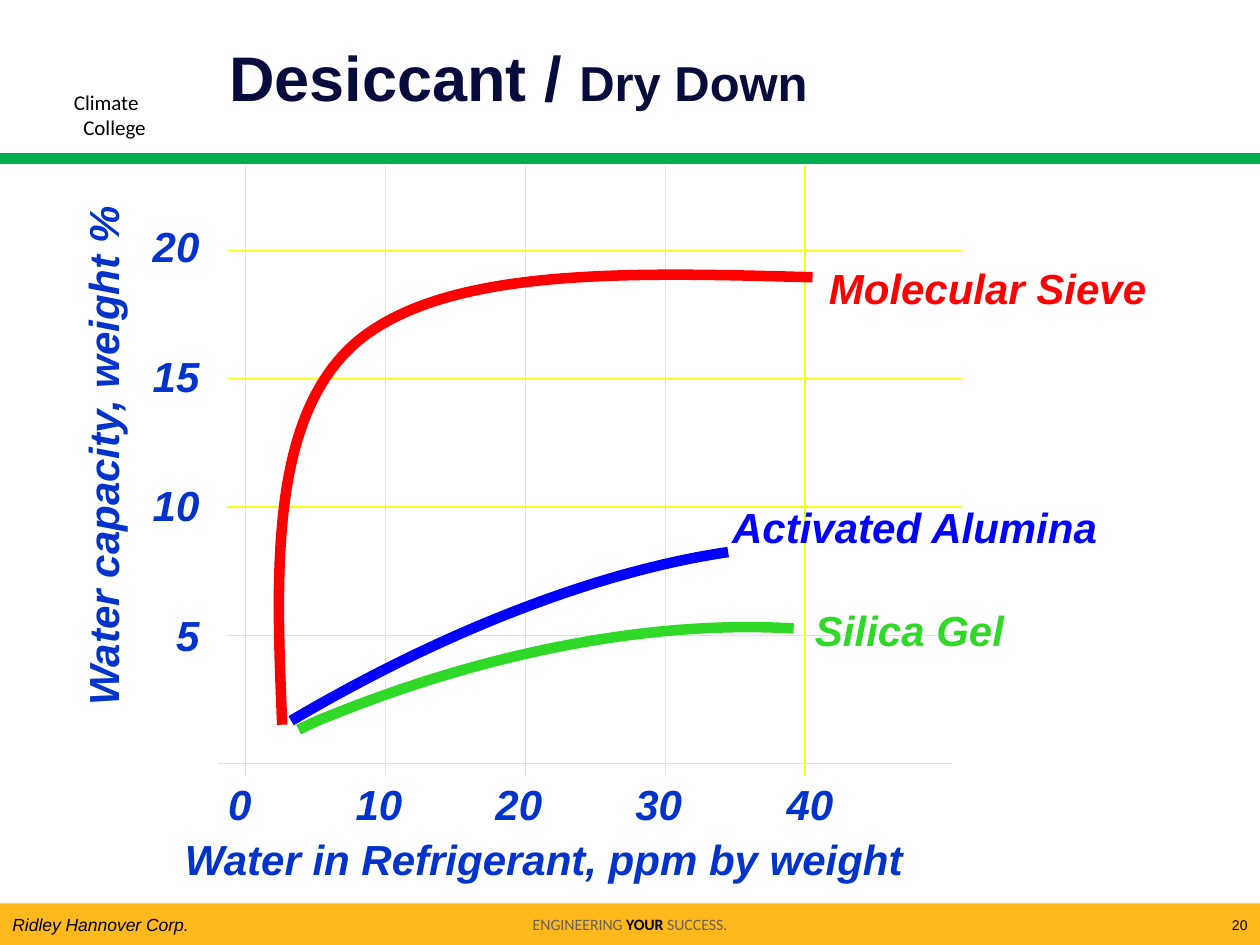
from dataclasses import dataclass

from lxml import etree
from pptx import Presentation
from pptx.dml.color import RGBColor
from pptx.enum.shapes import MSO_CONNECTOR, MSO_SHAPE
from pptx.enum.text import MSO_ANCHOR, PP_ALIGN
from pptx.oxml.ns import qn
from pptx.util import Cm, Pt

STRAIGHT = MSO_CONNECTOR.STRAIGHT
RECTANGLE = MSO_SHAPE.RECTANGLE
TOP, MIDDLE = MSO_ANCHOR.TOP, MSO_ANCHOR.MIDDLE
LEFT, CENTER, RIGHT = PP_ALIGN.LEFT, PP_ALIGN.CENTER, PP_ALIGN.RIGHT


@dataclass(frozen=True)
class Theme:
    heading_font: str = "Arial"
    brand_font: str = "Calibri"
    black: str = "000000"
    navy: str = "070C3C"
    axis: str = "0033CC"
    grid: str = "F2FD1D"
    rule: str = "00B050"
    footer: str = "FFB91D"
    motto: str = "6A6055"
    sieve: str = "FF0000"
    alumina: str = "0000FF"
    silica: str = "30D828"
    title_size: int = 36
    subtitle_size: int = 28
    label_size: int = 24
    college_size: int = 12
    company_size: int = 10
    motto_size: int = 9
    number_size: int = 8
    thick: float = 6
    thin: float = 0.75


class SlideBuilder:
    def __init__(self, slide, theme):
        self.shapes = slide.shapes
        self.theme = theme

    def style(self, run, size, color, font=None, bold=False, italic=False):
        run.font.name = font or self.theme.heading_font
        run.font.size = Pt(size)
        run.font.bold = bold
        run.font.italic = italic
        run.font.color.rgb = RGBColor.from_string(color)

    def frame(self, box, anchor=TOP, insets=(0.25, 0.13, 0.25, 0.13), rotation=0):
        holder = self.shapes.add_textbox(*map(Cm, box))
        holder.rotation = rotation
        frame = holder.text_frame
        frame.word_wrap = True
        frame.vertical_anchor = anchor
        (frame.margin_left, frame.margin_top,
         frame.margin_right, frame.margin_bottom) = map(Cm, insets)
        return frame

    def text(self, words, box, size, color, align=LEFT, anchor=MIDDLE, italic=False):
        paragraph = self.frame(box, anchor).paragraphs[0]
        paragraph.text = words
        paragraph.alignment = align
        self.style(paragraph.runs[0], size, color, italic=italic)

    def label(self, words, left, top, width, color, align=LEFT, rotation=0, tabs=()):
        frame = self.frame((left, top, width, 1.3), insets=(0.76, 0.38, 0.25, 0.13),
                           rotation=rotation)
        paragraph = frame.paragraphs[0]
        paragraph.text = words
        if tabs:
            stops = etree.SubElement(paragraph._p.get_or_add_pPr(), qn("a:tabLst"))
            for position in tabs:
                etree.SubElement(stops, qn("a:tab"), pos=str(Cm(position)), algn="ctr")
        paragraph.alignment = align
        paragraph.line_spacing = 0.8
        self.style(paragraph.runs[0], self.theme.label_size, color, bold=True, italic=True)

    def title(self, heading, topic):
        paragraph = self.frame((4.37, 0.2, 19.53, 2.69), MIDDLE).paragraphs[0]
        sizes = self.theme.title_size, self.theme.subtitle_size
        for words, size in zip((heading, topic), sizes):
            run = paragraph.add_run()
            run.text = words
            self.style(run, size, self.theme.navy, bold=True)

    def college(self, first, second):
        frame = self.frame((1.24, 1.68, 2.29, 1.27))
        frame.text = f"{first}\n{second}"
        frame.paragraphs[1]._p.get_or_add_pPr().set("marL", str(Cm(0.19)))
        for paragraph in frame.paragraphs:
            self.style(paragraph.runs[0], self.theme.college_size, self.theme.black,
                       self.theme.brand_font)

    def footer(self, parts):
        band = self.shapes.add_shape(RECTANGLE, Cm(0), Cm(18.21), Cm(25.4), Cm(0.84))
        band.shadow.inherit = False
        band.fill.solid()
        band.fill.fore_color.rgb = RGBColor.from_string(self.theme.footer)
        band.line.fill.background()
        band.text_frame.vertical_anchor = MIDDLE
        paragraph = band.text_frame.paragraphs[0]
        paragraph.alignment = CENTER
        for words, color, bold in parts:
            run = paragraph.add_run()
            run.text = words
            self.style(run, self.theme.motto_size, color, self.theme.brand_font, bold)

    def line(self, x1, y1, x2, y2, color, width):
        stroke = self.shapes.add_connector(STRAIGHT, *map(Cm, (x1, y1, x2, y2)))
        stroke.line.color.rgb = RGBColor.from_string(color)
        stroke.line.width = Pt(width)
        etree.SubElement(stroke._element.spPr, qn("a:effectLst"))

    def curve(self, points, color):
        start, *rest = [(Cm(x), Cm(y)) for x, y in points]
        builder = self.shapes.build_freeform(*start)
        builder.add_line_segments(rest, close=False)
        outline = builder.convert_to_shape()
        outline.shadow.inherit = False
        outline.fill.background()
        outline.line.color.rgb = RGBColor.from_string(color)
        outline.line.width = Pt(self.theme.thick)
        segments = list(outline._element.iter(qn("a:lnTo")))
        for first in range(0, len(segments), 3):
            bezier = etree.SubElement(segments[first].getparent(), qn("a:cubicBezTo"))
            for segment in segments[first:first + 3]:
                bezier.append(segment[0])
                segment.getparent().remove(segment)


def main():
    deck = Presentation()
    deck.slide_width, deck.slide_height = Cm(25.4), Cm(19.05)
    theme = Theme()
    page = SlideBuilder(deck.slides.add_slide(deck.slide_layouts[6]), theme)

    page.footer([("ENGINEERING ", theme.motto, False), ("YOUR ", theme.black, True),
                 ("SUCCESS.", theme.motto, False)])
    page.text("Ridley Hannover Corp.", (0, 18.21, 5.61, 0.84), theme.company_size,
              theme.black, italic=True)
    page.line(0, 3.2, 25.4, 3.2, theme.rule, theme.thick)
    page.college("Climate", "College")
    page.title("Desiccant / ", "Dry Down")

    for row in range(5):
        y = 5.05 + 2.585 * row
        left = 4.39 if row == 4 else 4.57
        page.line(left, y, left + 14.81, y, theme.grid, theme.thin)
    for column in range(5):
        x = 4.95 + 2.82 * column
        page.line(x, 15.65, x, 3.35, theme.grid, theme.thin)

    page.curve([(5.69, 14.61), (5.56, 11.48), (5.44, 8.38), (7.21, 6.88),
                (9.02, 5.38), (12.7, 5.49), (16.38, 5.59)], theme.sieve)
    page.label("Molecular Sieve", 15.95, 5.11, 7.54, theme.sieve)
    page.label("Activated Alumina", 14, 9.93, 8.64, theme.alumina)
    page.label("Silica Gel", 15.67, 12.01, 5.28, theme.silica)

    page.label("Water in Refrigerant, ppm by weight", 2.97, 16.61, 16.36, theme.axis)
    page.label("Water capacity, weight %", -3.68, 8.64, 11.4, theme.axis, rotation=270)
    page.label("0\t10\t20\t30\t40", 3.84, 15.52, 16.36, theme.axis,
               tabs=(3.04, 5.86, 8.68, 11.73))
    for row, capacity in enumerate((20, 15, 10, 5)):
        page.label(str(capacity), 2.29, 4.27 + 2.61 * row, 1.98, theme.axis, RIGHT)

    page.curve([(5.87, 14.53), (8.92, 12.73), (12.07, 11.51), (14.68, 11.13)],
               theme.alumina)
    page.curve([(6.02, 14.71), (6.23, 14.61), (6.45, 14.5), (6.65, 14.43),
                (9.86, 13.13), (13.18, 12.5), (16, 12.67)], theme.silica)
    page.text("20", (22.25, 18.24, 3.15, 0.81), theme.number_size, theme.black, RIGHT)

    deck.save("out.pptx")


if __name__ == "__main__":
    main()
